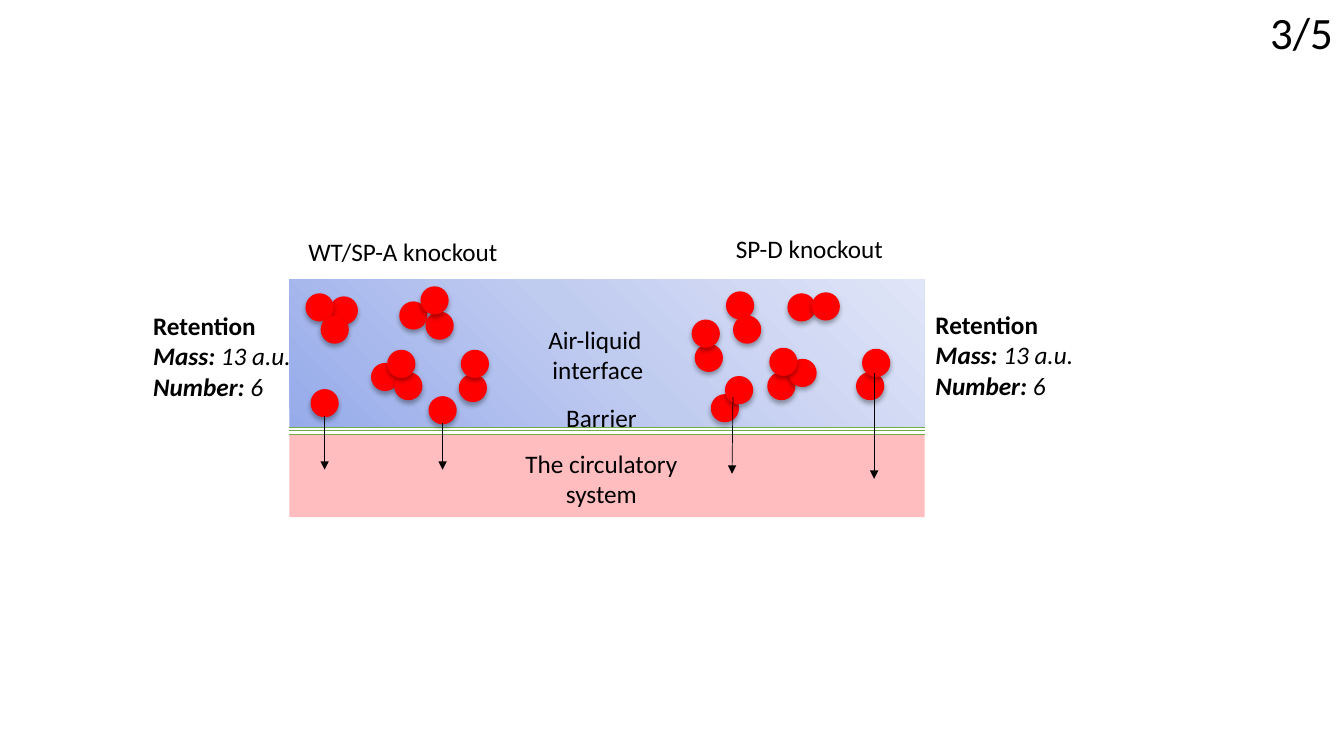
from copy import deepcopy
from dataclasses import dataclass

from lxml.etree import SubElement
from pptx import Presentation
from pptx.dml.color import RGBColor
from pptx.enum.shapes import MSO_CONNECTOR, MSO_SHAPE
from pptx.enum.text import MSO_AUTO_SIZE, PP_ALIGN
from pptx.oxml.ns import qn
from pptx.util import Inches, Pt


@dataclass(frozen=True)
class Theme:
    font: str = "Calibri"
    body: int = 18
    page: int = 32
    ink: str = "000000"
    blood: str = "FFBDBF"
    air: tuple = ("96ABEA", "C0CBF0", "E0E5F7")
    dot: str = "FF0000"
    wall: str = "70AD47"


class Canvas:
    def __init__(self, slide, theme):
        self.slide = slide
        self.theme = theme

    def shape(self, kind, box, color=None):
        shape = self.slide.shapes.add_shape(kind, *map(Inches, box))
        shape.shadow.inherit = False
        shape.line.fill.background()
        if color:
            shape.fill.solid()
            shape.fill.fore_color.rgb = RGBColor.from_string(color)
        return shape

    def blend(self, box, colors, angle):
        fill = self.shape(MSO_SHAPE.RECTANGLE, box)
        tones = fill.fill
        tones.gradient()
        tones.gradient_angle = angle
        stops = fill.element.spPr.find(".//" + qn("a:gsLst"))
        stops.append(deepcopy(stops[-1]))
        for rank, (stop, color) in enumerate(zip(tones.gradient_stops, colors)):
            stop.position = rank / (len(colors) - 1)
            stop.color.rgb = RGBColor.from_string(color)

    def dot(self, left, top, size=0.28):
        box = (left, top, size, size)
        shape = self.shape(MSO_SHAPE.OVAL, box, self.theme.dot)
        effect = shape.element.spPr.find(qn("a:effectLst"))
        format = {"blurRad": Pt(3.5), "dist": Pt(2.2), "dir": 5400000, "rotWithShape": 0}
        shade = SubElement(effect, qn("a:outerShdw"))
        for name, value in format.items():
            shade.set(name, str(int(value)))
        color = SubElement(shade, qn("a:srgbClr"), val=self.theme.ink)
        SubElement(color, qn("a:alpha"), val="32000")

    def line(self, start, end, color, width, arrow=False):
        ends = map(Inches, (*start, *end))
        line = self.slide.shapes.add_connector(MSO_CONNECTOR.STRAIGHT, *ends)
        line.line.color.rgb = RGBColor.from_string(color)
        line.line.width = Pt(width)
        props = line.element.spPr
        if arrow:
            SubElement(props.find(qn("a:ln")), qn("a:tailEnd"), type="triangle")
        SubElement(props, qn("a:effectLst"))

    def text(self, box, paras, size=None, align=PP_ALIGN.LEFT):
        frame = self.slide.shapes.add_textbox(*map(Inches, box)).text_frame
        frame.word_wrap = False
        frame.auto_size = MSO_AUTO_SIZE.SHAPE_TO_FIT_TEXT
        for rank, runs in enumerate(paras):
            para = frame.add_paragraph() if rank else frame.paragraphs[0]
            para.alignment = align
            for words, style in runs:
                for part, piece in enumerate(words.split("\n")):
                    if part:
                        para.add_line_break()
                    if piece:
                        self.run(para, piece, size or self.theme.body, style)

    def run(self, para, words, size, style):
        run = para.add_run()
        run.text = words
        format = {"name": self.theme.font, "size": Pt(size), **style}
        for name, value in format.items():
            setattr(run.font, name, value)
        run.font.color.rgb = RGBColor.from_string(self.theme.ink)


LEFT, RIGHT = 2.87, 9.17
BACK = [
    (3.27, 2.94), (3.96, 2.99), (4.22, 3.09), (3.03, 2.91), (3.18, 3.13),
    (3.68, 3.6), (4.17, 2.84), (3.08, 3.86), (3.91, 3.69), (6.89, 3.41),
    (7.61, 3.69), (7.81, 2.91), (6.86, 3.17), (7.2, 2.89), (8.49, 3.69),
    (8.55, 3.46), (8.05, 2.9), (7.82, 3.56), (7.27, 3.13),
]
FRONT = [
    (4.55, 3.71), (4.57, 3.47), (4.25, 3.93), (7.05, 3.91),
    (7.19, 3.73), (7.63, 3.45), (3.84, 3.47),
]
ARROWS = [
    ((3.22, 4.13), (3.22, 4.66)),
    ((4.39, 4.2), (4.39, 4.66)),
    ((8.67, 3.7), (8.67, 4.75)),
    ((7.27, 3.94), (7.26, 4.7)),
]
STRONG, SLANT = {"bold": True}, {"italic": True}
BOTH = STRONG | SLANT
RETAIN = [
    [("Retention", STRONG)],
    [("Mass:", BOTH), (" 13 a.u.\n", SLANT), ("Number: ", BOTH), ("6", SLANT)],
]
LABELS = [
    ((5.33, 3.17, 1.2, 0.71), "Air-liquid \ninterface", PP_ALIGN.CENTER),
    ((7.2, 2.27, 1.68, 0.4), "SP-D knockout", PP_ALIGN.LEFT),
    ((5.1, 4.4, 1.73, 0.71), "The circulatory\nsystem", PP_ALIGN.CENTER),
    ((5.51, 3.94, 0.91, 0.4), "Barrier", PP_ALIGN.CENTER),
    ((2.96, 2.3, 2.1, 0.4), "WT/SP-A knockout", PP_ALIGN.LEFT),
]


def main():
    deck = Presentation()
    deck.slide_width, deck.slide_height = Inches(13.33), Inches(7.5)
    theme = Theme()
    art = Canvas(deck.slides.add_slide(deck.slide_layouts[6]), theme)

    width = RIGHT - LEFT
    art.shape(MSO_SHAPE.RECTANGLE, (LEFT, 4.31, width, 0.82), theme.blood)
    art.blend((LEFT, 2.77, width, 1.47), theme.air, 45)
    for spot in BACK:
        art.dot(*spot)
    for top in (4.27, 4.31, 4.24):
        art.line((LEFT, top), (RIGHT, top), theme.wall, 1)
    for left, top in ((1.42, 3.03), (9.18, 3.02)):
        art.text((left, top, 1.58, 1.01), RETAIN)
    for box, words, align in LABELS:
        art.text(box, [[(words, {})]], align=align)
    for spot in FRONT:
        art.dot(*spot)
    for start, end in ARROWS:
        art.line(start, end, theme.ink, 0.5, arrow=True)
    art.text((12.5, 0, 0.83, 0.64), [[("3/5", {})]], theme.page)

    deck.save("out.pptx")


if __name__ == "__main__":
    main()
